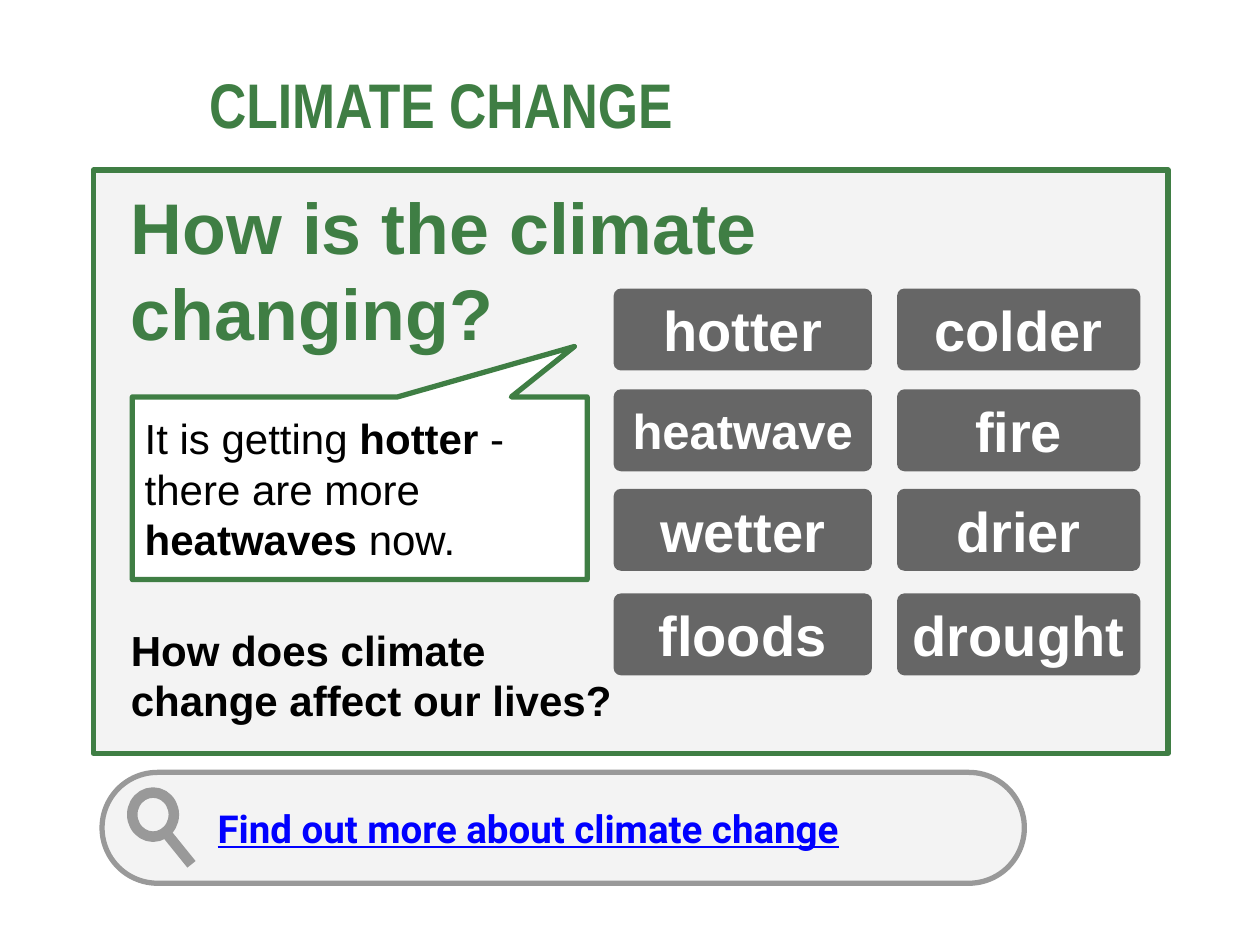
from lxml import etree
from pptx import Presentation
from pptx.dml.color import RGBColor
from pptx.enum.shapes import MSO_CONNECTOR, MSO_SHAPE as Shape
from pptx.enum.text import MSO_ANCHOR as Anchor, PP_ALIGN as Align
from pptx.oxml.ns import qn
from pptx.util import Inches, Pt

COLORS = {
    "green": "3F7E44",
    "panel": "F3F3F3",
    "white": "FFFFFF",
    "black": "000000",
    "tile": "666666",
    "outline": "999999",
    "link": "0000FF",
}


def color(name):
    return RGBColor.from_string(COLORS[name])


class SlideBuilder:
    """Holds the slide and its style, with a method for each kind of element."""

    font = "Arial"
    inset = 0.1

    def __init__(self, slide):
        self.slide = slide

    def style_line(self, line, name, width):
        line.color.rgb = color(name)
        line.width = Pt(width)

    def title(self, text, left, top, width, height):
        shape = self.slide.shapes.title
        shape.left, shape.top = Inches(left), Inches(top)
        shape.width, shape.height = Inches(width), Inches(height)
        self.set_frame(shape.text_frame, inset=0)
        paragraph = self.format_paragraph(shape.text_frame.paragraphs[0])
        self.run(paragraph, text, 36, "green", True, "Arial Narrow")

    def set_frame(self, frame, anchor=Anchor.MIDDLE, inset=inset):
        frame.word_wrap = True
        frame.vertical_anchor = anchor
        frame.margin_left = frame.margin_right = Inches(inset)
        frame.margin_top = frame.margin_bottom = Inches(inset)

    def shape(self, kind, left, top, width, height, fill=None, line=None,
              line_width=3, adjustments=(), shapes=None):
        shapes = self.slide.shapes if shapes is None else shapes
        shape = shapes.add_shape(
            kind, Inches(left), Inches(top), Inches(width), Inches(height))
        shape.shadow.inherit = False
        for index, value in enumerate(adjustments):
            shape.adjustments[index] = value
        if fill:
            shape.fill.solid()
            shape.fill.fore_color.rgb = color(fill)
        else:
            shape.fill.background()
        if line:
            self.style_line(shape.line, line, line_width)
        else:
            shape.line.fill.background()
        self.set_frame(shape.text_frame)
        return shape

    def line(self, start, end, name, width, shapes):
        connector = shapes.add_connector(
            MSO_CONNECTOR.STRAIGHT, *(Inches(value) for value in start + end))
        self.style_line(connector.line, name, width)
        etree.SubElement(connector._element.spPr, qn("a:effectLst"))

    def format_paragraph(self, paragraph, align=Align.LEFT, indent=0):
        paragraph.alignment = align
        paragraph._p.get_or_add_pPr().set("marL", str(Inches(indent)))
        return paragraph

    def run(self, paragraph, text, size, name, bold=False, font=font, underline=False):
        run = paragraph.add_run()
        run.text = text
        run.font.name = font
        run.font.size = Pt(size)
        run.font.bold = bold
        run.font.underline = underline
        run.font.color.rgb = color(name)

    def broken_text(self, paragraph, first, second, size, name):
        """Adds two bold lines with a line break between them."""
        self.format_paragraph(paragraph, indent=0.2)
        self.run(paragraph, first, size, name, True)
        paragraph.add_line_break()
        self.run(paragraph, second, size, name, True)

    def panel(self):
        shape = self.shape(Shape.RECTANGLE, 0.74, 1.35, 8.53, 4.63, "panel", "green")
        frame = shape.text_frame
        self.set_frame(frame, Anchor.TOP)
        self.broken_text(frame.paragraphs[0], "How is the climate ", "changing?",
                         41, "green")
        question = frame.add_paragraph()
        question.space_before = Pt(154)
        self.broken_text(question, "How does climate ", "change affect our lives?",
                         24, "black")

    def search_bar(self, text):
        shapes = self.slide.shapes.add_group_shape().shapes
        bar = self.shape(Shape.ROUNDED_RECTANGLE, 0.81, 6.13, 7.32, 0.88,
                         "panel", "outline", adjustments=[0.5], shapes=shapes)
        paragraph = self.format_paragraph(bar.text_frame.paragraphs[0], indent=0.69)
        self.run(paragraph, text, 22, "link", True, "Roboto", underline=True)
        self.shape(Shape.OVAL, 1.05, 6.29, 0.33, 0.35,
                   line="outline", line_width=6, shapes=shapes)
        self.line((1.31, 6.6), (1.52, 6.86), "outline", 6, shapes)

    def callout(self, pieces):
        shape = self.shape(Shape.ROUNDED_RECTANGULAR_CALLOUT, 1.05, 3.15, 3.61, 1.45,
                           "white", "green", adjustments=[0.472, -0.776, 0])
        paragraph = self.format_paragraph(shape.text_frame.paragraphs[0])
        for text, bold in pieces:
            self.run(paragraph, text, 24, "black", bold)

    def word_tile(self, word, left, top, width, size):
        shape = self.shape(Shape.ROUNDED_RECTANGLE, left, top, width, 0.65,
                           "tile", adjustments=[0.089])
        paragraph = self.format_paragraph(shape.text_frame.paragraphs[0], Align.CENTER)
        self.run(paragraph, word, size, "white", True)


def main():
    presentation = Presentation()
    presentation.slide_width, presentation.slide_height = Inches(10), Inches(7.5)
    title_only = presentation.slide_layouts[5]
    builder = SlideBuilder(presentation.slides.add_slide(title_only))

    builder.panel()
    builder.title("CLIMATE CHANGE", 1.66, 0.45, 7.66, 0.74)
    builder.search_bar("Find out more about climate change")
    builder.callout([
        ("It is getting ", False), ("hotter", True), (" - there are more ", False),
        ("heatwaves", True), (" now.", False),
    ])

    columns = [(4.87, 2.05), (7.12, 1.93)]
    rows = {
        2.29: ("hotter", "colder"),
        3.09: ("heatwave", "fire"),
        3.88: ("wetter", "drier"),
        4.71: ("floods", "drought"),
    }
    for top, words in rows.items():
        for word, (left, width) in zip(words, columns):
            size = 28 if word == "heatwave" else 32
            builder.word_tile(word, left, top, width, size)

    presentation.save("out.pptx")


if __name__ == "__main__":
    main()
